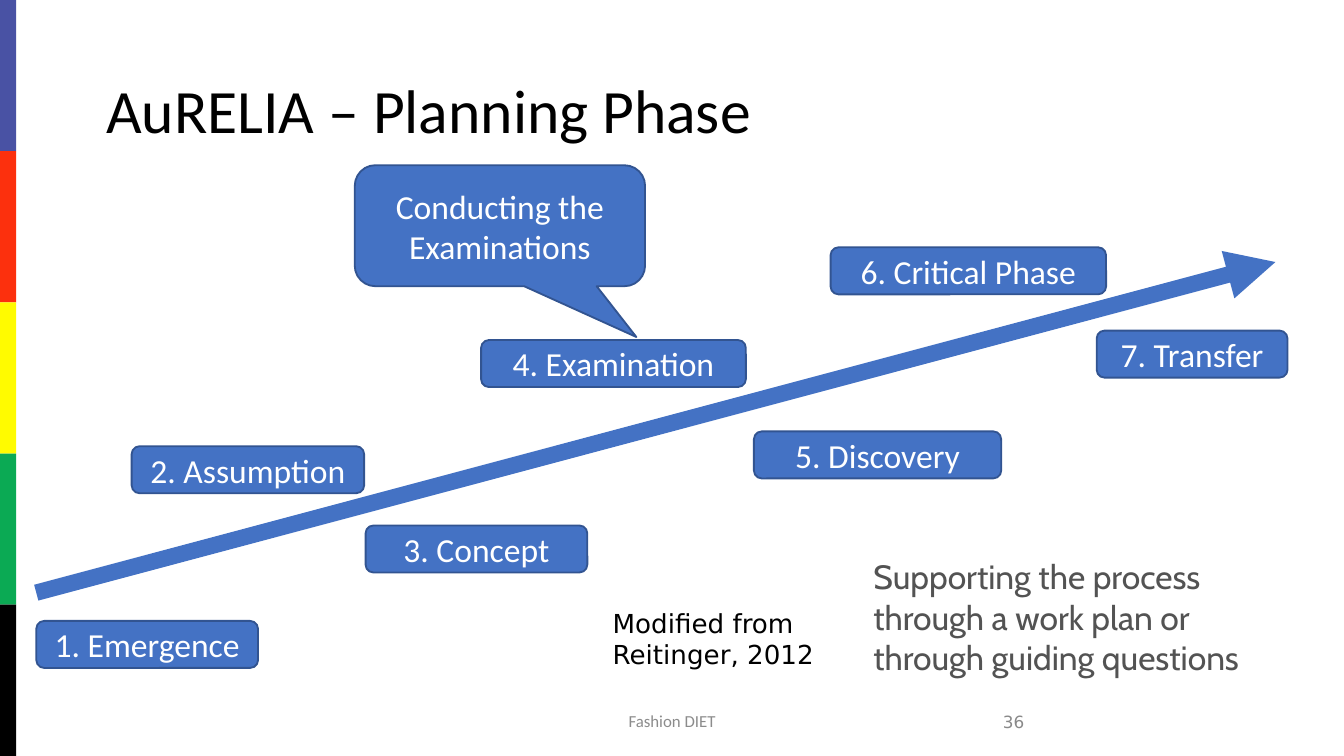
"""Build the AuRELIA planning phase slide."""
from typing import NamedTuple

from lxml.etree import SubElement
from pptx import Presentation
from pptx.dml.color import RGBColor
from pptx.enum.shapes import MSO_CONNECTOR as CONN, MSO_SHAPE as SHAPE
from pptx.enum.text import MSO_ANCHOR as ANCHOR, MSO_AUTO_SIZE as AUTO, PP_ALIGN as ALIGN
from pptx.oxml.ns import qn
from pptx.util import Inches, Pt

BLACK = RGBColor(0x00, 0x00, 0x00)
WHITE = RGBColor(0xFF, 0xFF, 0xFF)
BLUE = RGBColor(0x44, 0x72, 0xC4)
DARK_BLUE = RGBColor(0x32, 0x54, 0x91)
FOOTER_GREY = RGBColor(0x8C, 0x8C, 0x8C)
NUMBER_GREY = RGBColor(0x89, 0x89, 0x89)
TEXT_GREY = RGBColor(0x53, 0x53, 0x53)
STRIPES = [RGBColor(0x49, 0x52, 0xA4), RGBColor(0xFC, 0x30, 0x0D),
           RGBColor(0xFF, 0xFB, 0x00), RGBColor(0x0B, 0xAA, 0x54), BLACK]
WIDTH = 10
HEIGHT = WIDTH * 9 / 16
STEP_HEIGHT = 0.35


class Step(NamedTuple):
    text: str
    left: float
    top: float
    width: float


STEPS = [
    Step("1. Emergence", 0.27, 4.62, 1.65),
    Step("2. Assumption", 0.98, 3.32, 1.73),
    Step("3. Concept", 2.72, 3.91, 1.65),
    Step("4. Examination", 3.58, 2.53, 1.97),
    Step("5. Discovery", 5.61, 3.21, 1.84),
    Step("7. Transfer", 8.16, 2.46, 1.42),
    Step("6. Critical Phase", 6.18, 1.84, 2.05),
]


def write(sp, *lines: str, size: float = 18, font: str = "Calibri", color: RGBColor = WHITE,
          align: ALIGN = ALIGN.LEFT, anchor: ANCHOR = ANCHOR.MIDDLE, spacing: float = 1) -> None:
    tf = sp.text_frame
    tf.word_wrap = True
    tf.auto_size = AUTO.NONE
    tf.vertical_anchor = anchor
    for i, line in enumerate(lines):
        p = tf.add_paragraph() if i else tf.paragraphs[0]
        p.alignment = align
        p.line_spacing = spacing
        r = p.add_run()
        r.text = line
        r.font.size = Pt(size)
        r.font.name = font
        r.font.color.rgb = color


def add_box(s, kind: SHAPE, left: float, top: float, width: float, height: float,
            fill: RGBColor = BLUE, line: RGBColor | None = DARK_BLUE):
    sp = s.shapes.add_shape(kind, Inches(left), Inches(top), Inches(width), Inches(height))
    sp.shadow.inherit = False
    sp.fill.solid()
    sp.fill.fore_color.rgb = fill
    if line is None:
        sp.line.fill.background()
    else:
        sp.line.color.rgb = line
        sp.line.width = Pt(1)
    return sp


def add_text(s, left: float, top: float, width: float, height: float, *lines: str, **fmt) -> None:
    sp = s.shapes.add_textbox(Inches(left), Inches(top), Inches(width), Inches(height))
    write(sp, *lines, **fmt)


def add_arrow(s, x1: float, y1: float, x2: float, y2: float) -> None:
    cx = s.shapes.add_connector(CONN.STRAIGHT, Inches(x1), Inches(y1), Inches(x2), Inches(y2))
    cx.line.color.rgb = BLUE
    cx.line.width = Pt(8.75)
    props = cx._element.spPr
    SubElement(props.find(qn("a:ln")), qn("a:tailEnd"), type="triangle")
    SubElement(props, qn("a:effectLst"))


def main() -> None:
    prs = Presentation()
    prs.slide_width, prs.slide_height = Inches(WIDTH), Inches(HEIGHT)
    s = prs.slides.add_slide(prs.slide_layouts[5])

    title = s.shapes.title
    title.left, title.top = Inches(0.69), Inches(0.3)
    title.width, title.height = Inches(8.62), Inches(1.09)
    write(title, "AuRELIA – Planning Phase", size=33, color=BLACK, spacing=0.9)

    stripe_height = HEIGHT / len(STRIPES)
    for i, color in enumerate(STRIPES):
        add_box(s, SHAPE.RECTANGLE, 0, i * stripe_height, 0.12, stripe_height, color, None)

    add_text(s, 3.31, 5.21, 3.38, 0.3, "Fashion DIET", size=9, color=FOOTER_GREY,
             align=ALIGN.CENTER)
    add_text(s, 5.47, 5.22, 2.25, 0.3, "36", size=9, font="DejaVu Sans", color=NUMBER_GREY,
             align=ALIGN.RIGHT)

    add_arrow(s, 0.27, 4.41, 9.49, 1.95)
    for step in STEPS:
        sp = add_box(s, SHAPE.ROUNDED_RECTANGLE, step.left, step.top, step.width, STEP_HEIGHT)
        write(sp, step.text, align=ALIGN.CENTER)

    callout = add_box(s, SHAPE.ROUNDED_RECTANGULAR_CALLOUT, 2.64, 1.23, 2.16, 0.9)
    for i, value in enumerate((0.47, 0.92, 0.17)):
        callout.adjustments[i] = value
    write(callout, "Conducting the Examinations", align=ALIGN.CENTER)

    add_text(s, 6.4, 4.09, 3.6, 1.01, "Supporting the process", "through a work plan or",
             "through guiding questions", font="Cabin", color=TEXT_GREY, anchor=ANCHOR.TOP)
    add_text(s, 4.46, 4.47, 1.97, 0.57, "Modified from Reitinger, 2012", size=14,
             font="DejaVu Sans", color=BLACK, anchor=ANCHOR.TOP)
    prs.save("out.pptx")


if __name__ == "__main__":
    main()
